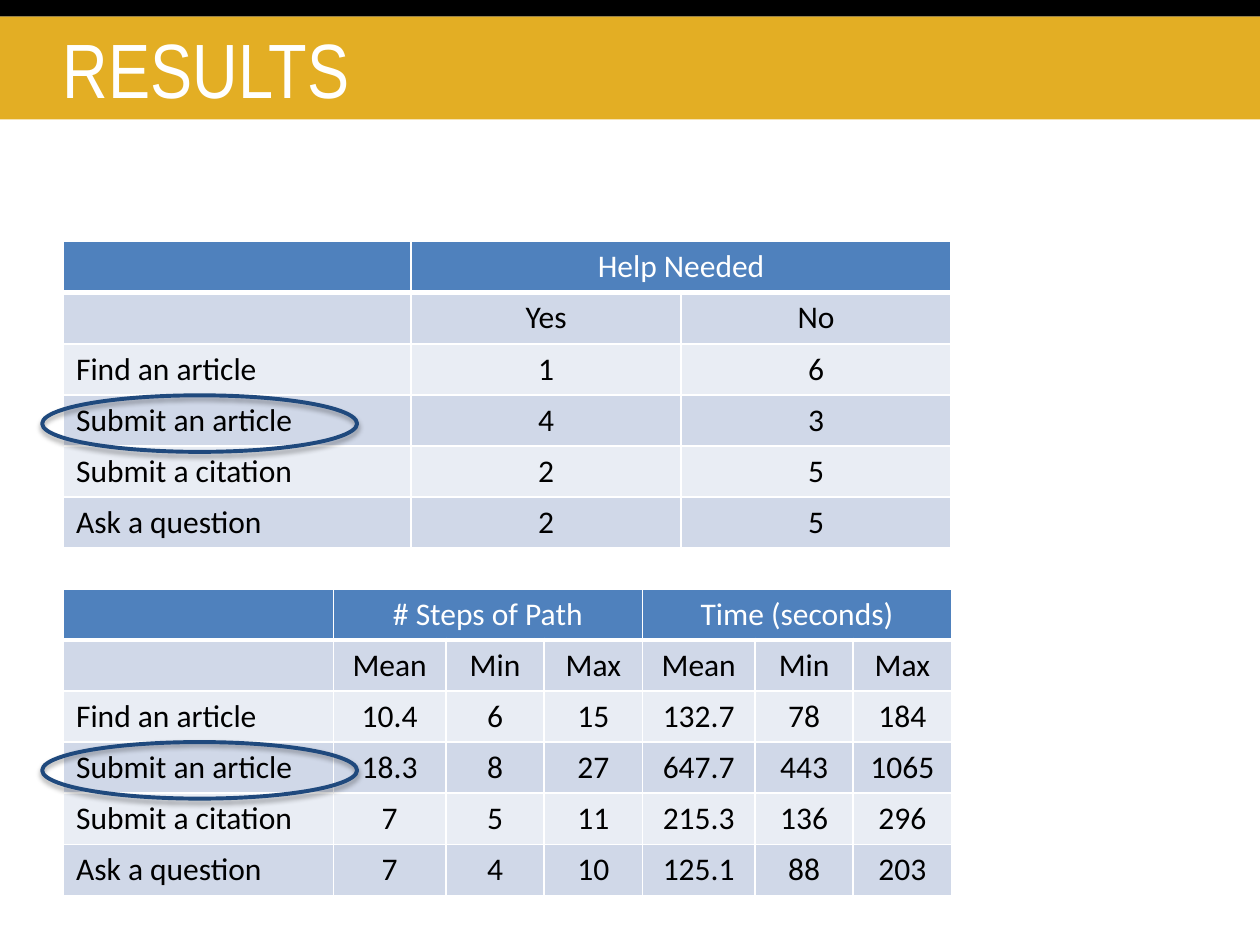
from lxml.etree import SubElement
from pptx import Presentation
from pptx.dml.color import RGBColor
from pptx.enum.shapes import MSO_SHAPE
from pptx.enum.text import MSO_ANCHOR, PP_ALIGN
from pptx.oxml.ns import qn
from pptx.util import Cm, Pt

COLORS = {
    "gold": "E3AE24",
    "black": "000000",
    "white": "FFFFFF",
    "header": "4F81BD",
    "dark_band": "D0D8E8",
    "light_band": "E9EDF4",
    "ring": "1F497D",
}

TASKS = ["Find an article", "Submit an article", "Submit a citation", "Ask a question"]
HELP_COUNTS = [["1", "6"], ["4", "3"], ["2", "5"], ["2", "5"]]
EFFORT = [
    ["10.4", "6", "15", "132.7", "78", "184"],
    ["18.3", "8", "27", "647.7", "443", "1065"],
    ["7", "5", "11", "215.3", "136", "296"],
    ["7", "4", "10", "125.1", "88", "203"],
]


def color(name):
    return RGBColor.from_string(COLORS[name])


def write_text(frame, text, font="Calibri", size=18, ink="black", align=PP_ALIGN.LEFT):
    para = frame.paragraphs[0]
    para.alignment = align
    para.font.size = Pt(size)
    if text:
        span = para.add_run()
        span.text = text
        span.font.name = font
        span.font.size = Pt(size)
        span.font.bold = False
        span.font.color.rgb = color(ink)


class SlideBuilder:
    row_height = 1.03
    border_width = 1
    header_rule_width = 3

    def __init__(self, page):
        self.page = page

    def band(self, top, height, fill):
        shape = self.page.shapes.add_shape(
            MSO_SHAPE.RECTANGLE, Cm(0), Cm(top), Cm(25.4), Cm(height)
        )
        shape.shadow.inherit = False
        shape.fill.solid()
        shape.fill.fore_color.rgb = color(fill)
        shape.line.fill.background()

    def title(self, text, left, top, width, height):
        box = self.page.shapes.add_textbox(Cm(left), Cm(top), Cm(width), Cm(height))
        box.text_frame.word_wrap = True
        box.text_frame.vertical_anchor = MSO_ANCHOR.MIDDLE
        write_text(box.text_frame, text, font="Arial Narrow", size=44, ink="white")

    def border(self, cell, side, width):
        properties = cell._tc.get_or_add_tcPr()
        line = SubElement(properties, qn(f"a:ln{side}"), w=str(Pt(width)))
        fill = SubElement(line, qn("a:solidFill"))
        SubElement(fill, qn("a:srgbClr"), val=COLORS["white"])

    def cell(self, cell, text, row, column):
        is_header = row == 0
        for side in "LRTB":
            thick = is_header and side == "B"
            self.border(cell, side, self.header_rule_width if thick else self.border_width)
        fill = "header" if is_header else ("dark_band" if row % 2 else "light_band")
        cell.fill.solid()
        cell.fill.fore_color.rgb = color(fill)
        write_text(
            cell.text_frame,
            text,
            ink="white" if is_header else "black",
            align=PP_ALIGN.CENTER if column else PP_ALIGN.LEFT,
        )

    def table(self, left, top, widths, groups, measures, values):
        group_size = len(measures)
        header = [""]
        for group in groups:
            header += [group] + [""] * (group_size - 1)
        rows = [header, [""] + measures * len(groups)]
        rows += [[task] + numbers for task, numbers in zip(TASKS, values)]
        table = self.page.shapes.add_table(
            len(rows), len(widths), Cm(left), Cm(top),
            Cm(sum(widths)), Cm(self.row_height * len(rows)),
        ).table
        for column, width in zip(table.columns, widths):
            column.width = Cm(width)
        for row, texts in enumerate(rows):
            table.rows[row].height = Cm(self.row_height)
            for column, text in enumerate(texts):
                self.cell(table.cell(row, column), text, row, column)
        for first in range(1, len(widths), group_size):
            table.cell(0, first).merge(table.cell(0, first + group_size - 1))

    def ring(self, left, top, width, height):
        shape = self.page.shapes.add_shape(
            MSO_SHAPE.OVAL, Cm(left), Cm(top), Cm(width), Cm(height)
        )
        shape.fill.background()
        shape.line.color.rgb = color("ring")
        shape.line.width = Pt(2.25)
        shape.shadow.inherit = False
        effects = shape._element.spPr.find(qn("a:effectLst"))
        shadow = SubElement(
            effects, qn("a:outerShdw"), blurRad=str(Pt(3.1)), dist=str(Pt(1.8)),
            dir="5400000", rotWithShape="0",
        )
        tint = SubElement(shadow, qn("a:srgbClr"), val=COLORS["black"])
        SubElement(tint, qn("a:alpha"), val="35000")


def main():
    deck = Presentation()
    deck.slide_width = Cm(25.4)
    deck.slide_height = Cm(19.05)
    builder = SlideBuilder(deck.slides.add_slide(deck.slide_layouts[6]))

    builder.band(0.33, 2.08, "gold")
    builder.band(0, 0.33, "black")
    builder.title("RESULTS", 1.02, 0.33, 23.14, 2.08)
    builder.table(
        1.28, 4.87, [7.01, 5.44, 5.44], ["Help Needed"], ["Yes", "No"], HELP_COUNTS
    )
    builder.table(
        1.28, 11.87, [5.44] + [2.27, 1.98, 1.98] * 2,
        ["# Steps of Path", "Time (seconds)"], ["Mean", "Min", "Max"], EFFORT,
    )
    for top in (7.97, 14.96):
        builder.ring(0.85, top, 6.35, 1.14)

    deck.save("out.pptx")


if __name__ == "__main__":
    main()
